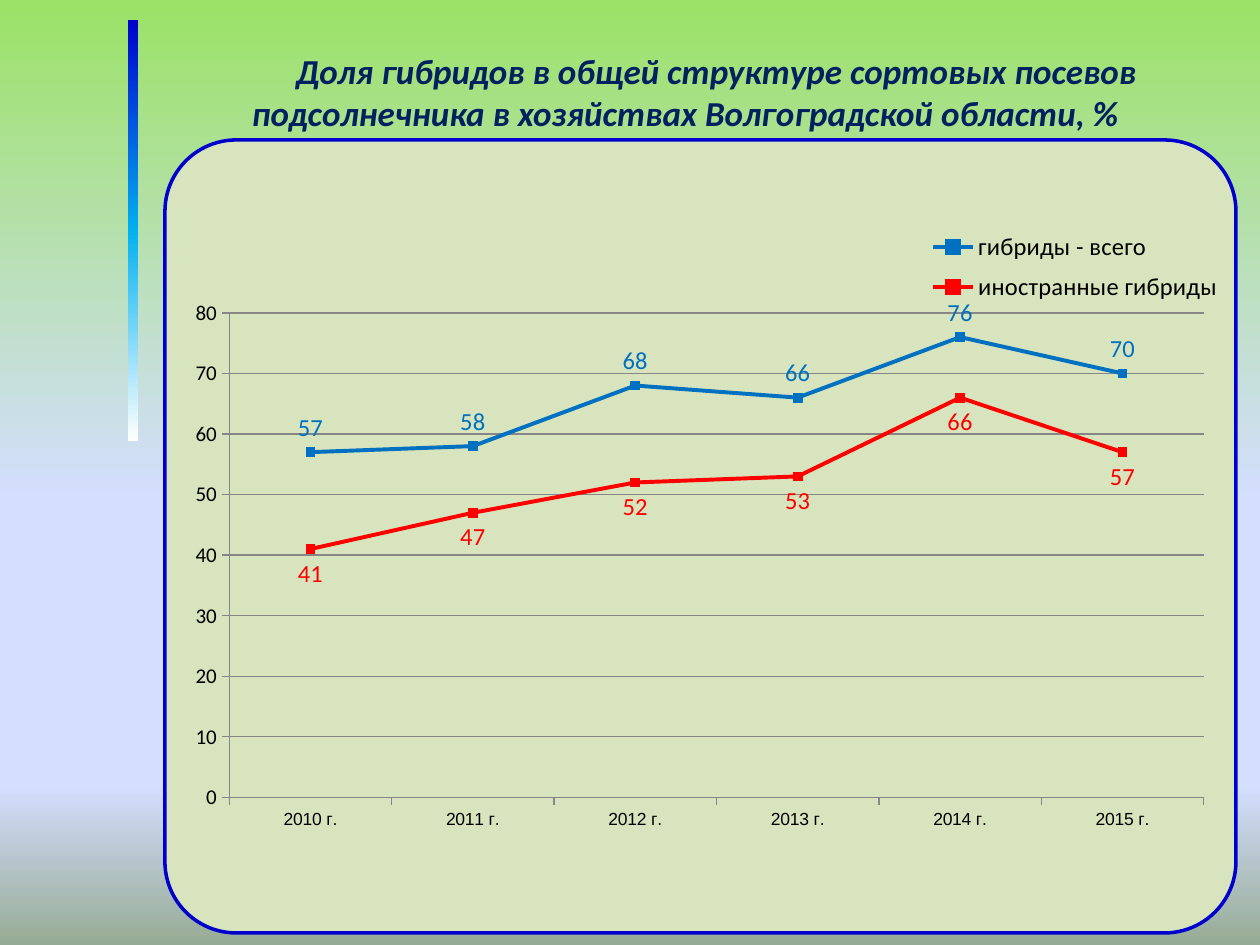
from lxml.etree import SubElement
from pptx import Presentation
from pptx.chart.data import CategoryChartData
from pptx.dml.color import RGBColor
from pptx.enum.chart import (XL_CHART_TYPE, XL_LABEL_POSITION, XL_LEGEND_POSITION,
                             XL_MARKER_STYLE, XL_TICK_MARK)
from pptx.enum.shapes import MSO_SHAPE
from pptx.enum.text import MSO_ANCHOR, PP_ALIGN
from pptx.oxml.ns import qn
from pptx.util import Emu, Pt

SCALE = 914400 / 126


def box(*nums):
    return [Emu(round(n * SCALE)) for n in nums]


def tint(color, code):
    color.rgb = RGBColor.from_string(code)


deck = Presentation()
deck.slide_width, deck.slide_height = box(1260, 945)
slide = deck.slides.add_slide(deck.slide_layouts[6])
shapes = slide.shapes

bar = shapes.add_shape(MSO_SHAPE.RECTANGLE, *box(128, 20, 10, 421))
bar.shadow.inherit = False
bar.line.fill.background()

back = [(0, "9BE266"), (53, "D4DEFF"), (83, "D4DEFF"), (100, "96AB94")]
fade = [(0, "0000CC"), (50, "00B0F0"), (100, "FFFFFF")]
for fill, node, stops in [(slide.background.fill, slide.element, back),
                          (bar.fill, bar.element, fade)]:
    fill.gradient()
    fill.gradient_angle = 270
    group = node.find(".//" + qn("a:gsLst"))
    for stop in list(group):
        group.remove(stop)
    for pos, code in stops:
        stop = SubElement(group, qn("a:gs"), pos=str(pos * 1000))
        SubElement(stop, qn("a:srgbClr"), val=code)

panel = shapes.add_shape(MSO_SHAPE.ROUNDED_RECTANGLE, *box(165, 140, 1071, 793))
panel.adjustments[0] = 0.09
panel.shadow.inherit = False
panel.fill.solid()
tint(panel.fill.fore_color, "D7E4BD")
tint(panel.line.color, "0000CC")
panel.line.width = Pt(2)

title = shapes.add_textbox(*box(137, 43, 1097, 97))
frame = title.text_frame
frame.word_wrap = True
frame.vertical_anchor = MSO_ANCHOR.MIDDLE
frame.text = ("Доля гибридов в общей структуре сортовых посевов "
              "подсолнечника в хозяйствах Волгоградской области, %")
para = frame.paragraphs[0]
para.alignment = PP_ALIGN.CENTER
para._p.get_or_add_pPr().set("indent", str(box(62)[0]))
font = para.runs[0].font
font.name, font.size, font.bold, font.italic = "Calibri", Pt(20), True, True
tint(font.color, "002060")

rows = [
    ("гибриды - всего", [57, 58, 68, 66, 76, 70], "0070C0", XL_LABEL_POSITION.ABOVE),
    ("иностранные гибриды", [41, 47, 52, 53, 66, 57], "FF0000", XL_LABEL_POSITION.BELOW),
]
data = CategoryChartData()
data.categories = [f"{year} г." for year in range(2010, 2016)]
for name, vals, code, place in rows:
    data.add_series(name, vals)
chart = shapes.add_chart(XL_CHART_TYPE.LINE_MARKERS, *box(165, 195, 1071, 655), data).chart
chart.has_title = False
chart.font.name, chart.font.size = "Calibri", Pt(18)
tint(chart.font.color, "000000")

plot = chart.plots[0]
plot.vary_by_categories = False
for line, (name, vals, code, place) in zip(plot.series, rows):
    line.smooth = False
    line.format.line.width = Pt(2.25)
    tint(line.format.line.color, code)
    mark = line.marker
    mark.style, mark.size = XL_MARKER_STYLE.SQUARE, 5
    mark.format.fill.solid()
    tint(mark.format.fill.fore_color, code)
    tint(mark.format.line.color, code)
    tags = line.data_labels
    tags.show_value = True
    tags.position = place
    tags.font.size = Pt(14)
    tint(tags.font.color, code)

for axis, face, size in [(chart.category_axis, "Arial", 10), (chart.value_axis, "Calibri", 12)]:
    axis.major_tick_mark = XL_TICK_MARK.OUTSIDE
    axis.minor_tick_mark = XL_TICK_MARK.NONE
    axis.tick_labels.font.name = face
    axis.tick_labels.font.size = Pt(size)
    tint(axis.format.line.color, "868686")
scale = chart.value_axis
scale.minimum_scale, scale.maximum_scale, scale.major_unit = 0, 80, 10
scale.has_major_gridlines = True
tint(scale.major_gridlines.format.line.color, "868686")

chart.has_legend = True
legend = chart.legend
legend.position = XL_LEGEND_POSITION.RIGHT
legend.include_in_layout = True
legend.font.size = Pt(14)

area = chart._chartSpace.find(".//" + qn("c:plotArea"))
key = chart._chartSpace.find(".//" + qn("c:legend"))
for node, spot, inner, sizes in [(area, 0, True, (0.06, 0.18, 0.91, 0.74)),
                                 (key, 1, False, (0.71, 0.04, 0.28, 0.14))]:
    for old in node.findall(qn("c:layout")):
        node.remove(old)
    layout = SubElement(node, qn("c:layout"))
    node.insert(spot, layout)
    manual = SubElement(layout, qn("c:manualLayout"))
    if inner:
        SubElement(manual, qn("c:layoutTarget"), val="inner")
    for side in "xy":
        SubElement(manual, qn(f"c:{side}Mode"), val="edge")
    for side, size in zip("xywh", sizes):
        SubElement(manual, qn(f"c:{side}"), val=str(size))

deck.save("out.pptx")
